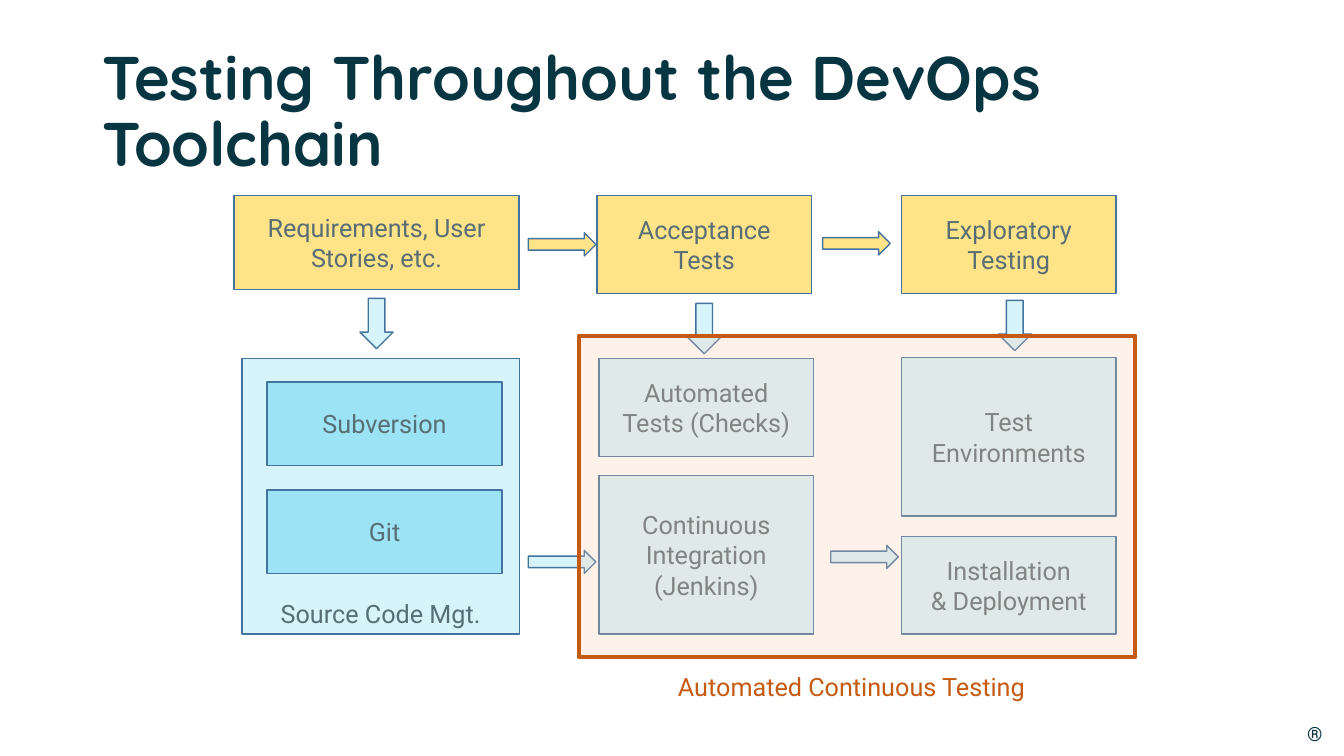
from dataclasses import dataclass

from lxml.etree import SubElement
from pptx import Presentation
from pptx.dml.color import RGBColor
from pptx.enum.shapes import MSO_SHAPE
from pptx.enum.text import MSO_ANCHOR, MSO_AUTO_SIZE, PP_ALIGN
from pptx.oxml.ns import qn
from pptx.shapes.autoshape import Shape
from pptx.slide import Slide
from pptx.text.text import Font
from pptx.util import Inches, Pt

YELLOW, PALE_BLUE, BLUE = "FFE389", "D7F4FB", "9CE3F5"
OUTLINE, GREY, NAVY = "43739E", "586E75", "073642"
ORANGE, PEACH = "C55A11", "F8CBAD"

# Columns, rows and sizes of the toolchain grid
TESTS_X, DEPLOY_X, TOP_Y = 5.94, 8.94, 1.94
STAGE_W, SHORT_H, TALL_H = 2.13, 0.97, 1.57


@dataclass(frozen=True)
class Stage:
    text: str
    left: float
    top: float
    width: float
    height: float
    fill: str
    anchor: MSO_ANCHOR = MSO_ANCHOR.MIDDLE


@dataclass(frozen=True)
class Flow:
    left: float
    top: float
    fill: str = PALE_BLUE
    down: bool = False


STAGES = [
    Stage("Source Code Mgt.", 2.4, 3.56, 2.75, 2.73, PALE_BLUE, MSO_ANCHOR.BOTTOM),
    Stage("Requirements, User Stories, etc.", 2.32, TOP_Y, 2.83, 0.93, YELLOW),
    Stage("Subversion", 2.65, 3.79, 2.33, 0.83, BLUE),
    Stage("Git", 2.65, 4.86, 2.33, 0.83, BLUE),
    Stage("Continuous Integration\n(Jenkins)", TESTS_X, 4.72, STAGE_W, TALL_H, PALE_BLUE),
    Stage("Automated\nTests (Checks)", TESTS_X, 3.56, STAGE_W, SHORT_H, PALE_BLUE),
    Stage("Test Environments", DEPLOY_X, 3.55, STAGE_W, TALL_H, PALE_BLUE),
    Stage("Acceptance\nTests", 5.92, TOP_Y, STAGE_W, SHORT_H, YELLOW),
    Stage("Installation\n& Deployment", DEPLOY_X, 5.32, STAGE_W, SHORT_H, PALE_BLUE),
    Stage("Exploratory\nTesting", DEPLOY_X, TOP_Y, STAGE_W, SHORT_H, YELLOW),
]

FLOWS = [
    Flow(5.24, 2.31, YELLOW),
    Flow(8.16, 2.3, YELLOW),
    Flow(5.24, 5.46),
    Flow(8.24, 5.41),
    Flow(3.57, 2.96, down=True),
    Flow(6.82, 3.01, down=True),
    Flow(9.9, 2.98, down=True),
]


def rgb(value: str) -> RGBColor:
    return RGBColor.from_string(value)


def set_font(font: Font, name: str, size: float, color: str, bold: bool = False) -> None:
    font.name, font.size, font.bold = name, Pt(size), bold
    font.color.rgb = rgb(color)


def write(shape: Shape, text: str, size: float, color: str) -> None:
    shape.text_frame.text = text
    for paragraph in shape.text_frame.paragraphs:
        paragraph.alignment = PP_ALIGN.CENTER
        set_font(paragraph.font, "Roboto", size, color)


def add_block(slide: Slide, kind: MSO_SHAPE, left: float, top: float, width: float,
              height: float, fill: str, line: str = OUTLINE, weight: float = 1) -> Shape:
    block = slide.shapes.add_shape(
        kind, Inches(left), Inches(top), Inches(width), Inches(height))
    block.shadow.inherit = False
    block.fill.solid()
    block.fill.fore_color.rgb = rgb(fill)
    block.line.color.rgb = rgb(line)
    block.line.width = Pt(weight)
    return block


def add_stage(slide: Slide, stage: Stage) -> None:
    block = add_block(slide, MSO_SHAPE.RECTANGLE, stage.left, stage.top,
                      stage.width, stage.height, stage.fill)
    block.text_frame.word_wrap = True
    block.text_frame.vertical_anchor = stage.anchor
    write(block, stage.text, 18, GREY)


def add_flow(slide: Slide, flow: Flow) -> None:
    kind, width, height = ((MSO_SHAPE.DOWN_ARROW, 0.33, 0.5) if flow.down
                           else (MSO_SHAPE.RIGHT_ARROW, 0.67, 0.23))
    add_block(slide, kind, flow.left, flow.top, width, height, flow.fill)


def add_title(slide: Slide, text: str) -> None:
    title = slide.shapes.title
    title.left, title.top = Inches(0.92), Inches(0.4)
    title.width, title.height = Inches(11.5), Inches(1.45)
    frame = title.text_frame
    frame.text = text
    frame.word_wrap = True
    frame.auto_size = MSO_AUTO_SIZE.NONE
    frame.vertical_anchor = MSO_ANCHOR.MIDDLE
    heading = frame.paragraphs[0]
    heading.alignment = PP_ALIGN.LEFT
    heading.line_spacing = 0.9
    set_font(heading.font, "Quicksand", 44, NAVY, bold=True)


def add_testing_scope(slide: Slide) -> None:
    scope = add_block(slide, MSO_SHAPE.RECTANGLE, 5.74, 3.33, 5.52, 3.19,
                      PEACH, ORANGE, 3)
    tint = scope.fill._xPr.find(qn("a:solidFill"))[0]
    SubElement(tint, qn("a:alpha"), val="25000")
    caption = slide.shapes.add_textbox(
        Inches(5.94), Inches(6.61), Inches(5.01), Inches(0.4))
    caption.text_frame.word_wrap = True
    write(caption, "Automated Continuous Testing", 18, ORANGE)


def add_registered_mark(slide: Slide) -> None:
    mark = slide.shapes.add_textbox(
        Inches(12.95), Inches(7.16), Inches(0.18), Inches(0.24))
    frame = mark.text_frame
    frame.margin_left = frame.margin_right = frame.margin_top = frame.margin_bottom = 0
    write(mark, "®", 14, NAVY)


def main() -> None:
    deck = Presentation()
    deck.slide_width, deck.slide_height = Inches(13.33), Inches(7.5)
    slide = deck.slides.add_slide(deck.slide_layouts[5])

    add_registered_mark(slide)
    add_title(slide, "Testing Throughout the DevOps Toolchain")

    # Toolchain stages and the flow between them
    for stage in STAGES:
        add_stage(slide, stage)
    for flow in FLOWS:
        add_flow(slide, flow)

    # Translucent frame over the automated part
    add_testing_scope(slide)
    deck.save("out.pptx")


if __name__ == "__main__":
    main()
